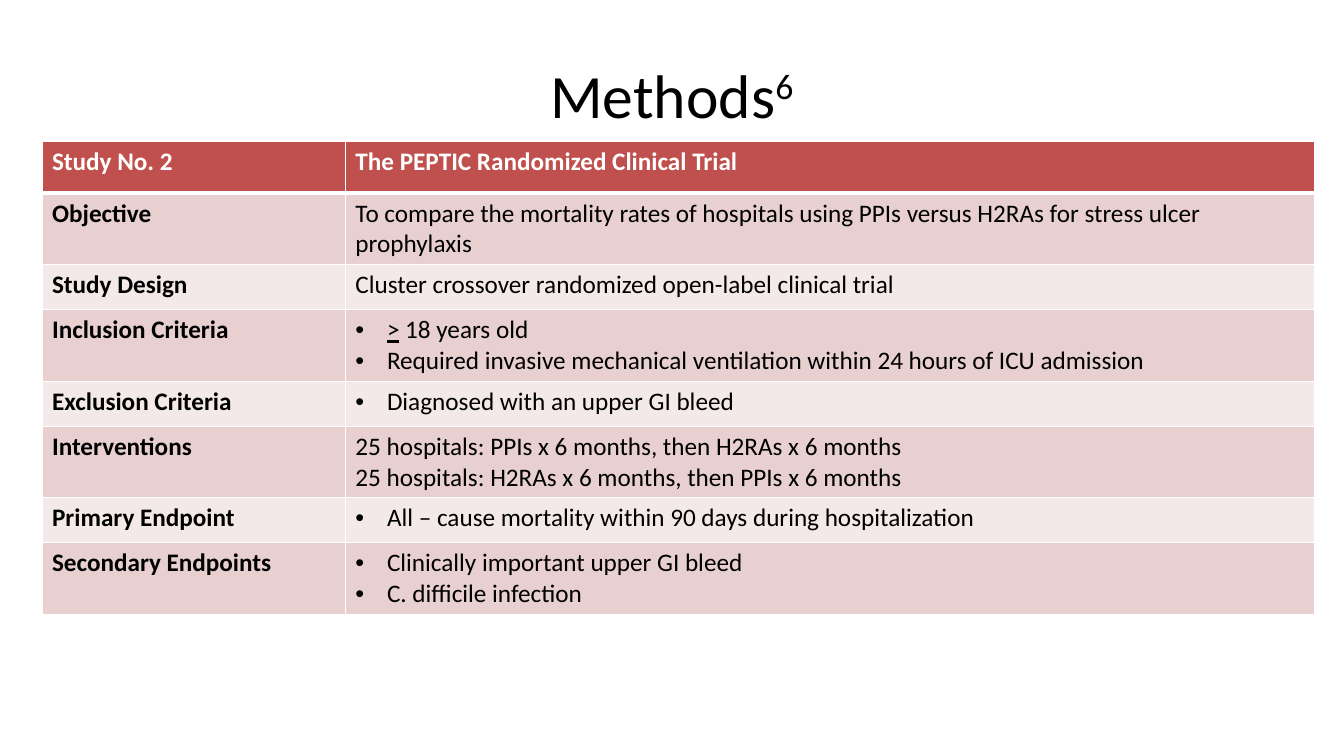
from lxml.etree import SubElement
from pptx import Presentation
from pptx.dml.color import RGBColor
from pptx.enum.text import MSO_ANCHOR as Anchor, PP_ALIGN as Align
from pptx.oxml.ns import qn
from pptx.util import Pt

PX = 9525  # 96 px to the inch
FONT = "Calibri"
BLACK = RGBColor(0x00, 0x00, 0x00)
WHITE = RGBColor(0xFF, 0xFF, 0xFF)
RED = RGBColor(0xC0, 0x50, 0x4D)
BANDS = [RGBColor(0xE8, 0xD0, 0xD0), RGBColor(0xF4, 0xE9, 0xE9)]

COLUMN_WIDTHS = [289, 923]
HEADER_HEIGHT, ONE_LINE, TWO_LINES = 49, 43, 68
BULLET_INDENT = 30

# Label, row height, bulleted or not, paragraphs
STUDY_ROWS = [
    ("Study No. 2", HEADER_HEIGHT, False, ["The PEPTIC Randomized Clinical Trial"]),
    ("Objective", TWO_LINES, False,
     ["To compare the mortality rates of hospitals using PPIs versus H2RAs "
      "for stress ulcer prophylaxis"]),
    ("Study Design", ONE_LINE, False,
     ["Cluster crossover randomized open-label clinical trial"]),
    ("Inclusion Criteria", TWO_LINES, True,
     ["> 18 years old",
      "Required invasive mechanical ventilation within 24 hours of ICU admission"]),
    ("Exclusion Criteria", ONE_LINE, True, ["Diagnosed with an upper GI bleed"]),
    ("Interventions", TWO_LINES, False,
     ["25 hospitals: PPIs x 6 months, then H2RAs x 6 months",
      "25 hospitals: H2RAs x 6 months, then PPIs x 6 months"]),
    ("Primary Endpoint", ONE_LINE, True,
     ["All – cause mortality within 90 days during hospitalization"]),
    ("Secondary Endpoints", TWO_LINES, True,
     ["Clinically important upper GI bleed", "C. difficile infection"]),
]


def set_font(para, size, color, bold=False):
    para.font.name = FONT
    para.font.size = Pt(size)
    para.font.bold = bold
    para.font.color.rgb = color


def add_bullet(para):
    props = para._p.get_or_add_pPr()
    props.set("marL", str(BULLET_INDENT * PX))
    props.set("indent", str(-BULLET_INDENT * PX))
    SubElement(props, qn("a:buFont"), typeface="Arial")
    SubElement(props, qn("a:buChar"), char="•")


def add_borders(cell, widths):
    props = cell._tc.get_or_add_tcPr()
    for side, width in widths.items():
        line = SubElement(props, qn(f"a:ln{side}"), w=str(Pt(width)))
        fill = SubElement(line, qn("a:solidFill"))
        SubElement(fill, qn("a:srgbClr"), val=str(WHITE))


def fill_cell(cell, texts, color, bold, bulleted=False):
    frame = cell.text_frame
    for index, text in enumerate(texts):
        para = frame.paragraphs[0] if index == 0 else frame.add_paragraph()
        if bulleted:
            add_bullet(para)
        set_font(para, 18, color, bold)
        # An underlined ">" stands for "at least"
        if text.startswith(">"):
            sign = para.add_run()
            sign.text, text = text[0], text[1:]
            sign.font.underline = True
        para.add_run().text = text


def add_title(page, left, top, width, height):
    box = page.shapes.add_textbox(left * PX, top * PX, width * PX, height * PX)
    frame = box.text_frame
    frame.word_wrap = True
    frame.vertical_anchor = Anchor.MIDDLE
    para = frame.paragraphs[0]
    para.alignment = Align.CENTER
    set_font(para, 44, BLACK)
    para.add_run().text = "Methods"
    reference = para.add_run()
    reference.text = "6"
    reference._r.get_or_add_rPr().set("baseline", "30000")


def add_study_table(page, left, top):
    heights = [height for _, height, _, _ in STUDY_ROWS]
    table = page.shapes.add_table(
        len(STUDY_ROWS), len(COLUMN_WIDTHS), left * PX, top * PX,
        sum(COLUMN_WIDTHS) * PX, sum(heights) * PX).table
    for column, width in zip(table.columns, COLUMN_WIDTHS):
        column.width = width * PX

    for index, (label, height, bulleted, texts) in enumerate(STUDY_ROWS):
        row = table.rows[index]
        row.height = height * PX
        header = index == 0
        color = WHITE if header else BLACK
        label_cell, detail_cell = row.cells
        fill_cell(label_cell, [label], color, True)
        fill_cell(detail_cell, texts, color, header, bulleted)
        # The line under the header is heavier
        widths = {"L": 1, "R": 1, "T": 3 if index == 1 else 1, "B": 3 if header else 1}
        for cell in (label_cell, detail_cell):
            add_borders(cell, widths)
            cell.fill.solid()
            cell.fill.fore_color.rgb = RED if header else BANDS[(index - 1) % 2]


def main():
    deck = Presentation()
    deck.slide_width, deck.slide_height = 1280 * PX, 720 * PX
    page = deck.slides.add_slide(deck.slide_layouts[6])
    add_title(page, 64, 29, 1152, 120)
    add_study_table(page, 40, 135)
    deck.save("out.pptx")


if __name__ == "__main__":
    main()
